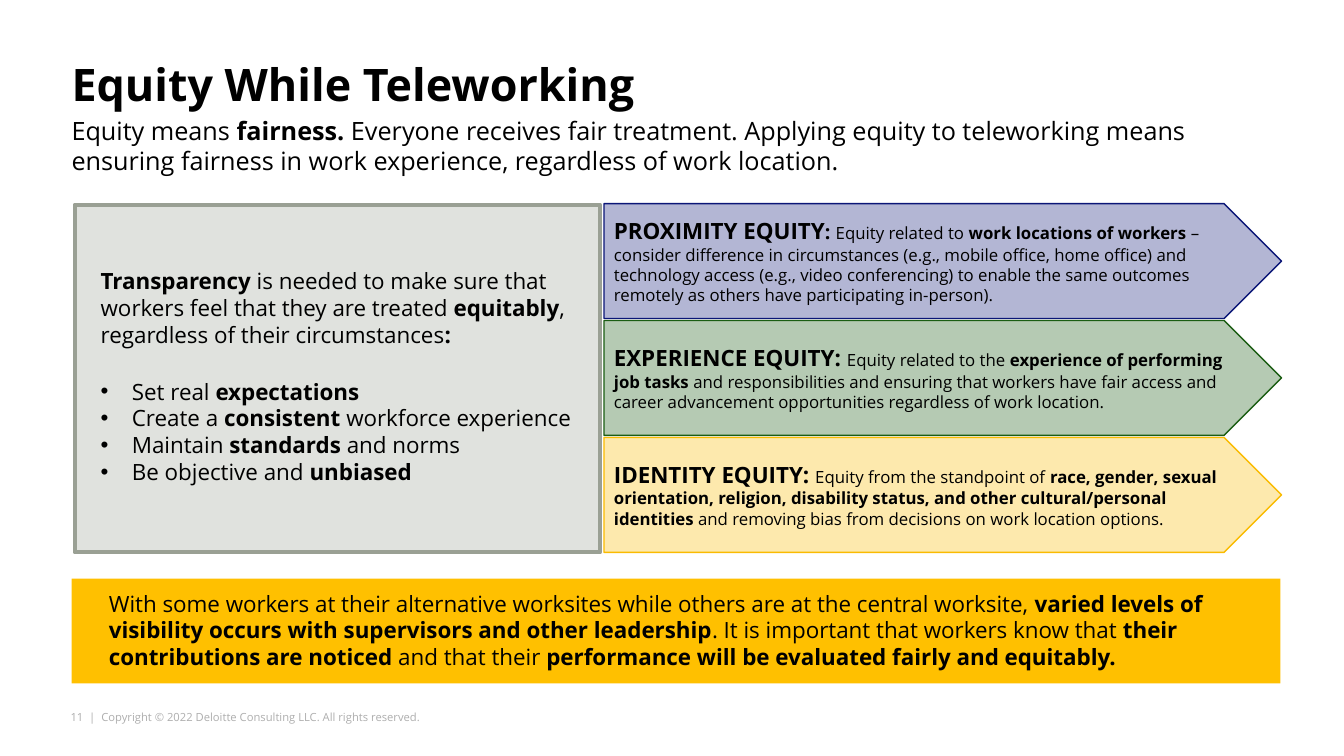
from dataclasses import dataclass

from lxml import etree
from pptx import Presentation
from pptx.dml.color import RGBColor
from pptx.enum.shapes import MSO_SHAPE
from pptx.enum.text import MSO_ANCHOR, MSO_AUTO_SIZE, PP_ALIGN
from pptx.oxml.ns import qn
from pptx.util import Emu, Pt

RECT, PLATE = MSO_SHAPE.RECTANGLE, MSO_SHAPE.PENTAGON
TOP, MIDDLE = MSO_ANCHOR.TOP, MSO_ANCHOR.MIDDLE
LEFT = PP_ALIGN.LEFT
FIXED = MSO_AUTO_SIZE.NONE
PX = 9144  # 100 px to the inch


@dataclass(frozen=True)
class Theme:
    face: str = "Open Sans"
    ink: str = "000000"
    faint: str = "AEAEAE"
    gold: str = "FFC000"
    gray: str = "9AA094"
    navy: str = "0B1677"
    green: str = "1B5D13"
    amber: str = "FABB01"
    title: int = 32
    lead: int = 18
    body: int = 16
    colon: int = 14
    small: int = 12
    foot: int = 8


@dataclass(frozen=True)
class Box:
    x: int
    y: int
    w: int
    h: int

    def emu(self) -> list[Emu]:
        return [Emu(n * PX) for n in (self.x, self.y, self.w, self.h)]


@dataclass(frozen=True)
class Span:
    """Text in one size; parts between asterisks are bold."""
    text: str
    size: int


@dataclass(frozen=True)
class Arrow:
    color: str
    alpha: int
    spans: tuple[Span, ...]


T = Theme()
TITLE = Box(71, 62, 1064, 65)
INTRO = Box(71, 114, 1144, 61)
PANEL = Box(74, 203, 521, 345)
NEEDS = Box(90, 260, 509, 229)
FIRST = Box(599, 202, 672, 114)
PITCH = 116
BAND = Box(71, 574, 1199, 104)
CLOSE = Box(108, 585, 1143, 81)
FOOT = Box(70, 705, 349, 13)
INDENT = 31
GAP = 21.5

ARROWS = (
    Arrow(T.navy, 31, (
        Span("*PROXIMITY EQUITY*", T.body),
        Span("*: *", T.colon),
        Span("Equity related to *work locations of workers *– consider difference in "
             "circumstances (e.g., mobile office, home office) and technology access "
             "(e.g., video conferencing) to enable the same outcomes remotely as others "
             "have participating in-person).", T.small))),
    Arrow(T.green, 32, (
        Span("*EXPERIENCE EQUITY: *", T.body),
        Span("Equity related to the *experience of performing job tasks *and "
             "responsibilities and ensuring that workers have fair access and career "
             "advancement opportunities regardless of work location.", T.small))),
    Arrow(T.amber, 32, (
        Span("*IDENTITY EQUITY: *", T.body),
        Span("Equity from the standpoint of *race, gender, sexual orientation, religion, "
             "disability status, and other cultural/personal identities* and removing "
             "bias from decisions on work location options.", T.small))),
)
NEED = ("*Transparency *is needed to make sure that workers feel that they are treated "
        "*equitably*, regardless of their circumstances*:*")
STEPS = (
    "Set real *expectations*",
    "Create a *consistent* workforce experience",
    "Maintain *standards* and norms",
    "Be objective and *unbiased*",
)


def write(par, spans: tuple[Span, ...], color: str = T.ink) -> None:
    par.alignment = LEFT
    for span in spans:
        for i, part in enumerate(span.text.split("*")):
            if not part:
                continue
            run = par.add_run()
            run.text = part
            style = {"name": T.face, "size": Pt(span.size), "bold": i % 2 == 1}
            for key, value in style.items():
                setattr(run.font, key, value)
            run.font.color.rgb = RGBColor.from_string(color)


def setup(frame, anchor=TOP, inset: bool = False, wrap: bool = True) -> None:
    style = {"word_wrap": wrap, "auto_size": FIXED, "vertical_anchor": anchor}
    if not inset:
        style |= {f"margin_{side}": 0 for side in ("left", "top", "right", "bottom")}
    for key, value in style.items():
        setattr(frame, key, value)


def add_text(slide, box: Box, span: Span, color: str = T.ink,
             inset: bool = False, wrap: bool = True):
    frame = slide.shapes.add_textbox(*box.emu()).text_frame
    setup(frame, inset=inset, wrap=wrap)
    write(frame.paragraphs[0], (span,), color)
    return frame


def add_form(slide, kind, box: Box, color: str, alpha: int = 100, line: int = 0):
    form = slide.shapes.add_shape(kind, *box.emu())
    form.shadow.inherit = False
    form.fill.solid()
    form.fill.fore_color.rgb = RGBColor.from_string(color)
    if alpha < 100:
        tint = form.fill._xPr.find(qn("a:solidFill"))[0]
        etree.SubElement(tint, qn("a:alpha"), val=str(alpha * 1000))
    if line:
        form.line.color.rgb = RGBColor.from_string(color)
        form.line.width = Pt(line)
    else:
        form.line.fill.background()
    return form


def add_dot(par) -> None:
    props = par._p.get_or_add_pPr()
    props.set("marL", str(INDENT * PX))
    props.set("indent", str(-INDENT * PX))
    etree.SubElement(props, qn("a:buFont"), typeface="Arial")
    etree.SubElement(props, qn("a:buChar"), char="•")


def add_title(slide) -> None:
    title = slide.shapes.title
    title.left, title.top, title.width, title.height = TITLE.emu()
    setup(title.text_frame)
    par = title.text_frame.paragraphs[0]
    par.line_spacing = 0.9
    write(par, (Span("*Equity While Teleworking*", T.title),))


def add_panel(slide) -> None:
    add_form(slide, RECT, PANEL, T.gray, 30, 3)
    frame = add_text(slide, NEEDS, Span(NEED, T.body), inset=True)
    for i, step in enumerate(STEPS):
        par = frame.add_paragraph()
        if i == 0:
            par.space_before = Pt(GAP)
        add_dot(par)
        write(par, (Span(step, T.body),))


def add_arrows(slide) -> None:
    for i, arrow in enumerate(ARROWS):
        box = Box(FIRST.x, FIRST.y + i * PITCH, FIRST.w, FIRST.h)
        form = add_form(slide, PLATE, box, arrow.color, arrow.alpha, 1)
        setup(form.text_frame, MIDDLE, inset=True)
        write(form.text_frame.paragraphs[0], arrow.spans)


def main() -> None:
    deck = Presentation()
    deck.slide_width, deck.slide_height = Emu(1333 * PX), Emu(750 * PX)
    slide = deck.slides.add_slide(deck.slide_layouts[5])
    add_text(slide, FOOT, Span("11  |  Copyright © 2022 Deloitte Consulting LLC. "
                               "All rights reserved.", T.foot), T.faint, wrap=False)
    add_title(slide)
    add_text(slide, INTRO, Span(
        "Equity means *fairness. *Everyone receives fair treatment. Applying equity to "
        "teleworking means ensuring fairness in work experience, regardless of work "
        "location.", T.lead))
    add_form(slide, RECT, BAND, T.gold)
    add_text(slide, CLOSE, Span(
        "With some workers at their alternative worksites while others are at the "
        "central worksite, *varied levels of visibility occurs with supervisors and "
        "other leadership*. It is important that workers know that *their contributions "
        "are noticed *and that their *performance will be evaluated fairly and "
        "equitably.*", T.body))
    add_arrows(slide)
    add_panel(slide)
    deck.save("out.pptx")


if __name__ == "__main__":
    main()
